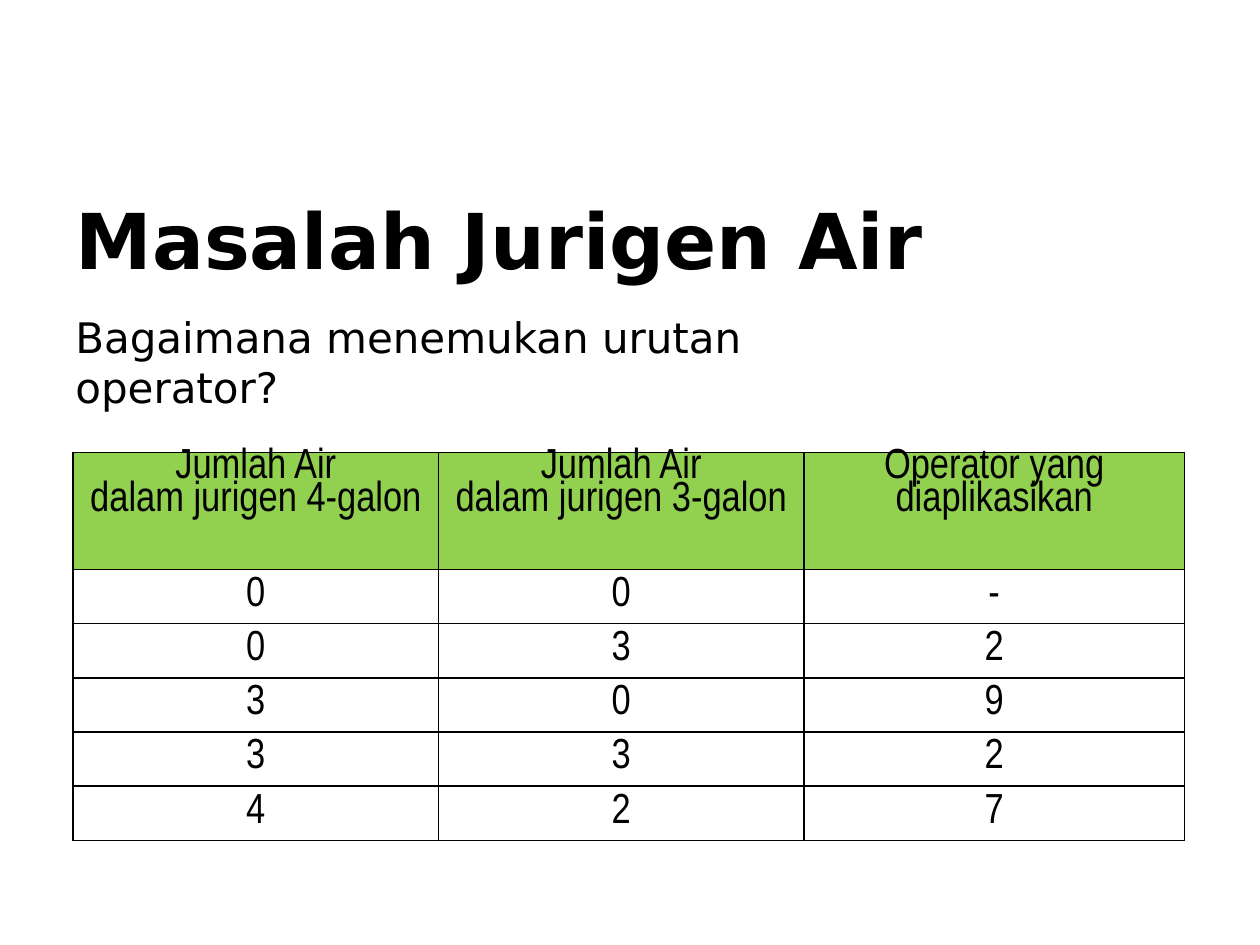
from dataclasses import dataclass

from lxml.etree import SubElement
from pptx import Presentation
from pptx.dml.color import RGBColor
from pptx.enum.text import MSO_ANCHOR, MSO_AUTO_SIZE, PP_ALIGN
from pptx.oxml.ns import qn
from pptx.util import Inches, Pt


@dataclass(frozen=True)
class Theme:
    ink: str = "000000"
    header: str = "92D050"
    text_font: str = "DejaVu Sans"
    table_font: str = "Arial Narrow"
    title_size: int = 44
    body_size: int = 24
    border: int = 1


THEME = Theme()

COLUMN_WIDTHS = [2.9, 2.9, 3.02]
HEADER_HEIGHT, ROW_HEIGHT = 0.93, 0.43
HEADERS = [
    ["Jumlah Air", "dalam jurigen 4-galon"],
    ["Jumlah Air", "dalam jurigen 3-galon"],
    ["Operator yang diaplikasikan"],
]
STEPS = ["00-", "032", "309", "332", "427"]


def add_run(p, text, font, size, bold=False):
    r = p.add_run()
    r.text = text
    r.font.name = font
    r.font.size = Pt(size)
    r.font.bold = bold
    r.font.color.rgb = RGBColor.from_string(THEME.ink)


def set_title(slide, text):
    title = slide.shapes.title
    title.left, title.top = Inches(0.5), Inches(1.42)
    title.width, title.height = Inches(9.08), Inches(0.95)
    tf = title.text_frame
    tf.vertical_anchor = MSO_ANCHOR.MIDDLE
    p = tf.paragraphs[0]
    p.alignment = PP_ALIGN.LEFT
    add_run(p, text, THEME.text_font, THEME.title_size, bold=True)


def add_question(slide, text):
    box = slide.shapes.add_textbox(Inches(0.5), Inches(2.42), Inches(6.67), Inches(0.5))
    tf = box.text_frame
    tf.word_wrap = True
    tf.auto_size = MSO_AUTO_SIZE.SHAPE_TO_FIT_TEXT
    add_run(tf.paragraphs[0], text, THEME.text_font, THEME.body_size)


def add_borders(cell):
    tc_pr = cell._tc.get_or_add_tcPr()
    for side in ("a:lnL", "a:lnR", "a:lnT", "a:lnB"):
        ln = SubElement(tc_pr, qn(side), w=str(Pt(THEME.border)))
        fill = SubElement(ln, qn("a:solidFill"))
        SubElement(fill, qn("a:srgbClr"), val=THEME.ink)


def fill_cell(cell, lines, is_header):
    add_borders(cell)
    if is_header:
        cell.fill.solid()
        cell.fill.fore_color.rgb = RGBColor.from_string(THEME.header)
    else:
        cell.fill.background()
    cell.margin_left = cell.margin_right = Inches(0.07)
    cell.margin_top = cell.margin_bottom = 0
    cell.vertical_anchor = MSO_ANCHOR.TOP if is_header else MSO_ANCHOR.MIDDLE
    tf = cell.text_frame
    for i, line in enumerate(lines):
        p = tf.add_paragraph() if i else tf.paragraphs[0]
        p.alignment = PP_ALIGN.CENTER
        p.line_spacing = 0.83
        add_run(p, line, THEME.table_font, THEME.body_size)


def add_steps_table(slide):
    rows = [HEADERS] + [[[value] for value in step] for step in STEPS]
    heights = [HEADER_HEIGHT] + [ROW_HEIGHT] * len(STEPS)
    table = slide.shapes.add_table(
        len(rows), len(COLUMN_WIDTHS), Inches(0.58), Inches(3.59),
        Inches(sum(COLUMN_WIDTHS)), Inches(sum(heights)),
    ).table
    table.first_row = table.horz_banding = False
    for column, width in zip(table.columns, COLUMN_WIDTHS):
        column.width = Inches(width)
    for i, (row, height) in enumerate(zip(rows, heights)):
        table.rows[i].height = Inches(height)
        for j, lines in enumerate(row):
            fill_cell(table.cell(i, j), lines, is_header=i == 0)


def main():
    prs = Presentation()
    prs.slide_width, prs.slide_height = Inches(10), Inches(7.5)
    slide = prs.slides.add_slide(prs.slide_layouts[5])
    set_title(slide, "Masalah Jurigen Air")
    add_steps_table(slide)
    add_question(slide, "Bagaimana menemukan urutan operator?")
    prs.save("out.pptx")


if __name__ == "__main__":
    main()
